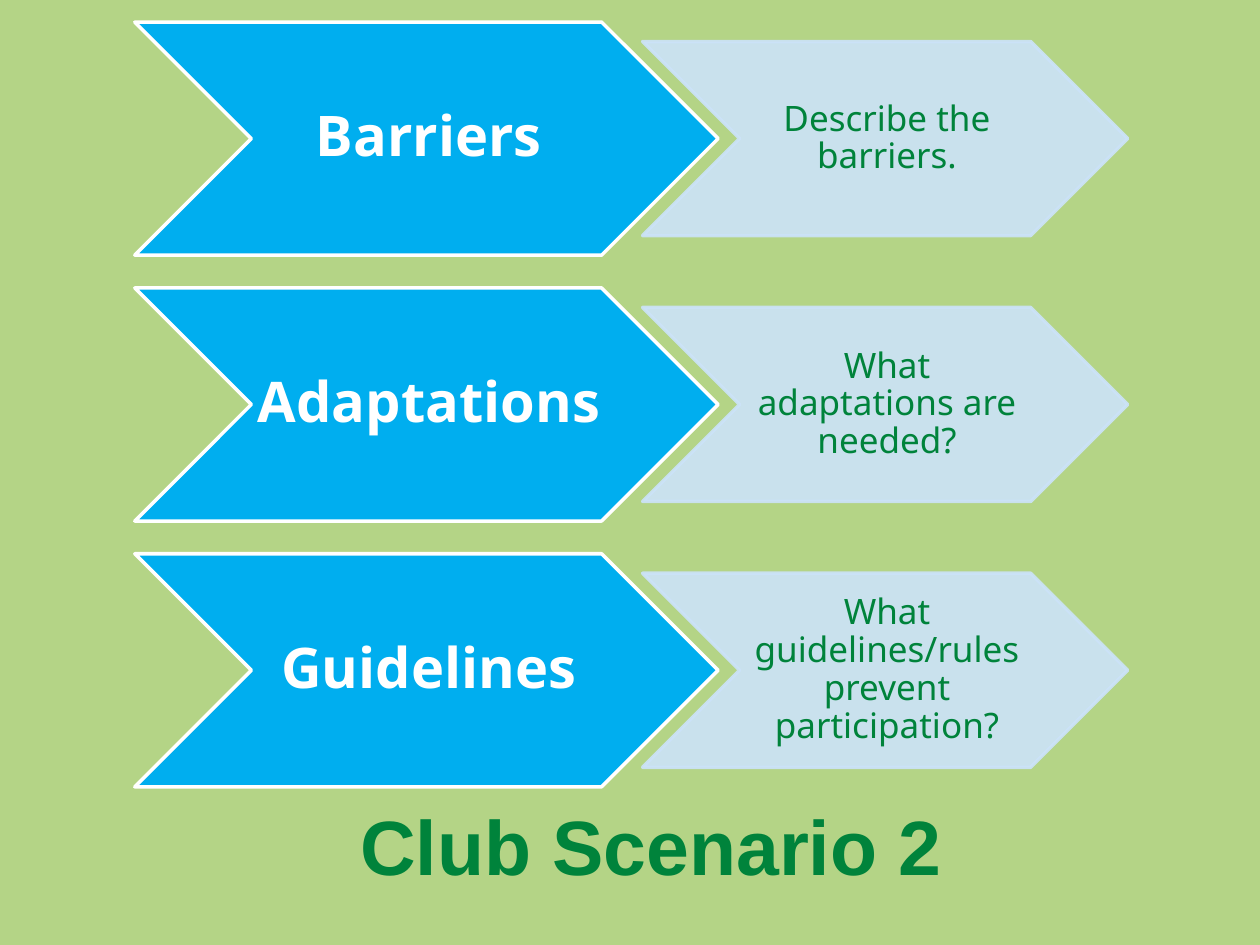
from lxml.etree import SubElement
from pptx import Presentation
from pptx.dml.color import RGBColor
from pptx.enum.shapes import MSO_SHAPE
from pptx.enum.text import MSO_ANCHOR, PP_ALIGN
from pptx.oxml.ns import qn
from pptx.util import Inches, Pt

# Content
TITLE = "Club Scenario 2"
STEPS = [
    ("Barriers", "Describe the barriers."),
    ("Adaptations", "What adaptations are needed?"),
    ("Guidelines", "What guidelines/rules prevent participation?"),
]

# Look of the two chevron columns
TOPIC = dict(left=1.07, width=4.63, height=1.85, fill="00AEEF", line="FFFFFF",
             opacity=100, size=32, color="FFFFFF", bold=True, insets=(0.04, 0.02))
QUESTION = dict(left=5.1, width=3.85, height=1.54, fill="CCE3F9", line="CCE3F9",
                opacity=90, size=20, color="00833B", bold=False, insets=(0.03, 0.01))
FIRST_CENTER, ROW_PITCH = 1.1, 2.11


def paint(color_format, hex_color):
    color_format.rgb = RGBColor.from_string(hex_color)


def paint_solid(fill, hex_color, opacity=100):
    fill.solid()
    paint(fill.fore_color, hex_color)
    return opacity


def write(frame, text, font_name, size, color, bold):
    frame.word_wrap = True
    frame.vertical_anchor = MSO_ANCHOR.MIDDLE
    paragraph = frame.paragraphs[0]
    paragraph.alignment = PP_ALIGN.CENTER
    run = paragraph.add_run()
    run.text = text
    run.font.name, run.font.size, run.font.bold = font_name, Pt(size), bold
    paint(run.font.color, color)
    return paragraph


def add_chevron(slide, text, center, look):
    height = look["height"]
    chevron = slide.shapes.add_shape(
        MSO_SHAPE.CHEVRON, Inches(look["left"]), Inches(center - height / 2),
        Inches(look["width"]), Inches(height))
    chevron.shadow.inherit = False
    paint_solid(chevron.fill, look["fill"])
    paint_solid(chevron.line.fill, look["line"])
    chevron.line.width = Pt(2)
    if look["opacity"] < 100:
        for color in chevron.element.spPr.iter(qn("a:srgbClr")):
            SubElement(color, qn("a:alpha"), val=str(look["opacity"] * 1000))

    frame = chevron.text_frame
    side, edge = look["insets"]
    frame.margin_left, frame.margin_right = Inches(side), 0
    frame.margin_top = frame.margin_bottom = Inches(edge)
    paragraph = write(frame, text, "Noto Sans", look["size"], look["color"], look["bold"])
    paragraph.line_spacing = 0.9


def main():
    deck = Presentation()
    deck.slide_width, deck.slide_height = Inches(10), Inches(7.5)
    slide = deck.slides.add_slide(deck.slide_layouts[5])
    paint_solid(slide.background.fill, "B4D486")

    # Title below the rows
    title = slide.shapes.title
    title.left, title.top = Inches(0.67), Inches(6.08)
    title.width, title.height = Inches(9), Inches(1.25)
    write(title.text_frame, TITLE, "Arial", 44, "00833B", True)

    # One topic and its question per row
    for row, (topic, question) in enumerate(STEPS):
        center = FIRST_CENTER + row * ROW_PITCH
        add_chevron(slide, topic, center, TOPIC)
        add_chevron(slide, question, center, QUESTION)

    deck.save("out.pptx")


if __name__ == "__main__":
    main()
